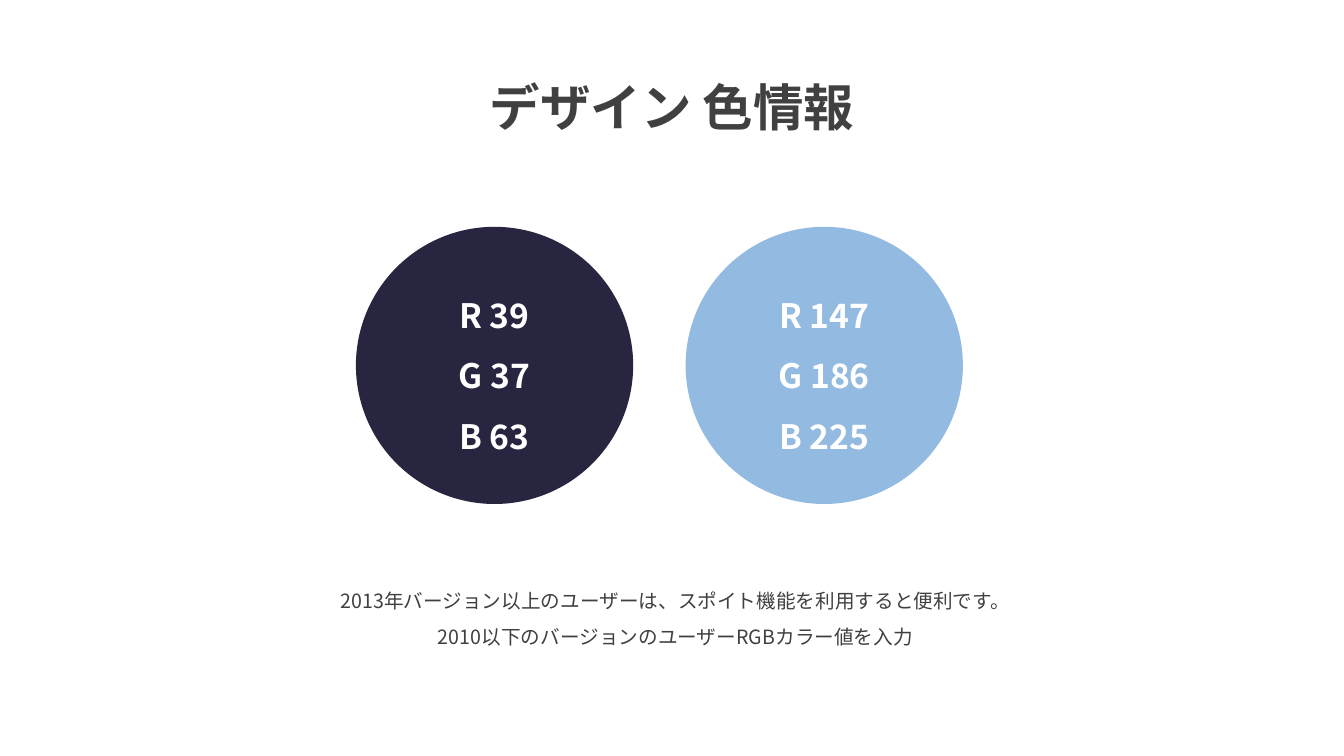
"""Build a slide showing the RGB values of the two design colours."""
from lxml import etree
from pptx import Presentation
from pptx import util as u
from pptx.dml.color import RGBColor
from pptx.enum import shapes, text
from pptx.oxml.ns import qn

HEADING = "デザイン 色情報"
SWATCHES = [("27253F", (39, 37, 63)), ("93BAE1", (147, 186, 225))]
ADVICE = [
    "2013年バージョン以上のユーザーは、スポイト機能を利用すると便利です。",
    "2010以下のバージョンのユーザーRGBカラー値を入力",
]
FONT, INK, WHITE = "Noto Sans CJK KR", "404040", "FFFFFF"
WIDTH, HEIGHT = 13.33, 7.5
DIAMETER, PITCH, FIRST_LEFT = 2.75, 3.27, 3.53
SWATCH_TOP = 0.3 * HEIGHT


def colour(code):
    """Turn a hex string into a colour."""
    return RGBColor.from_string(code)


def place(part, left, top, width, height):
    """Position a part, in inches."""
    part.left, part.top = u.Inches(left), u.Inches(top)
    part.width, part.height = u.Inches(width), u.Inches(height)


def write(part, lines, size, ink, bold, anchor):
    """Fill a part with centred, widely spaced lines."""
    frame = part.text_frame
    frame.text = "\n".join(lines)
    frame.word_wrap = True
    frame.auto_size = text.MSO_AUTO_SIZE.NONE
    frame.vertical_anchor = anchor
    for line in frame.paragraphs:
        line.alignment = text.PP_ALIGN.CENTER
        line.line_spacing = 1.5
        line.space_before = u.Pt(0)
        for run in line.runs:
            run.font.size = u.Pt(size)
            run.font.bold = bold
            run.font.color.rgb = colour(ink)
            run.font.name = FONT
            etree.SubElement(run._r.get_or_add_rPr(), qn("a:ea"), typeface=FONT)


def main():
    """Compose and save the slide."""
    deck = Presentation()
    deck.slide_width, deck.slide_height = u.Inches(WIDTH), u.Inches(HEIGHT)
    slide = deck.slides.add_slide(deck.slide_layouts[0])

    heading, advice = slide.shapes.title, slide.placeholders[1]
    place(heading, 4.24, 0.4, 4.85, 0.91)
    write(heading, [HEADING], 36, INK, True, text.MSO_ANCHOR.TOP)
    place(advice, 2.52, 5.68, 8.36, 0.77)
    write(advice, ADVICE, 14, INK, False, text.MSO_ANCHOR.TOP)

    for column, (fill, levels) in enumerate(SWATCHES):
        swatch = slide.shapes.add_shape(
            shapes.MSO_SHAPE.OVAL, u.Inches(FIRST_LEFT + column * PITCH),
            u.Inches(SWATCH_TOP), u.Inches(DIAMETER), u.Inches(DIAMETER))
        swatch.shadow.inherit = False
        swatch.fill.solid()
        swatch.fill.fore_color.rgb = colour(fill)
        swatch.line.fill.background()
        channels = [f"{channel} {level}" for channel, level in zip("RGB", levels)]
        write(swatch, channels, 24, WHITE, True, text.MSO_ANCHOR.MIDDLE)

    deck.save("out.pptx")


if __name__ == "__main__":
    main()
